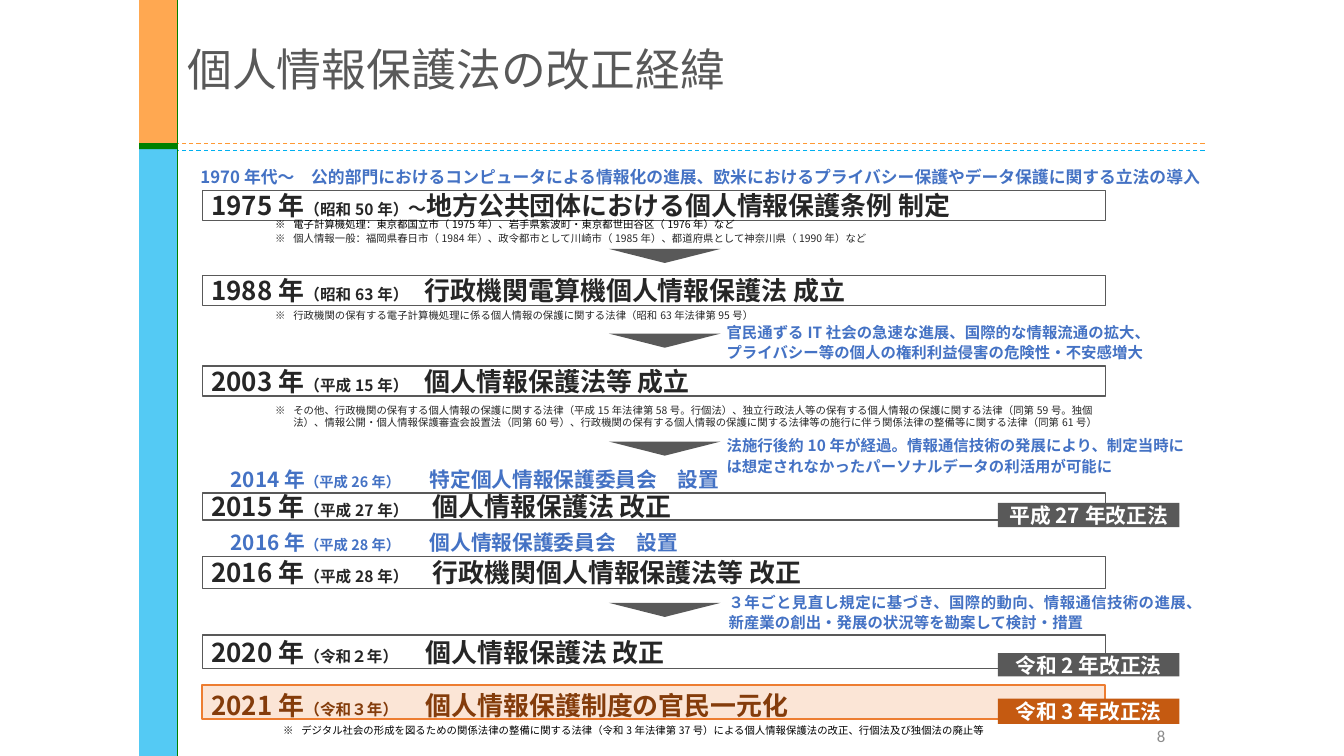
import pptx
import pptx.util
import pptx.dml.color
import pptx.enum.dml
import pptx.enum.shapes
import pptx.enum.text
import pptx.oxml
import pptx.oxml.ns
import lxml.etree

Pt = pptx.util.Pt
Kind = pptx.enum.shapes.MSO_SHAPE
Align = pptx.enum.text.PP_ALIGN
Anchor = pptx.enum.text.MSO_ANCHOR
qn = pptx.oxml.ns.qn

FONT = "Noto Sans CJK JP"
HUE = {
    "white": "FFFFFF", "black": "000000", "ink": "262626", "gray": "595959",
    "pale": "8C8C8C", "blue": "4472C4", "sky": "00B0F0", "orange": "FF9933",
    "green": "008000", "peach": "FBE5D6", "rust": "ED7D31", "brown": "843C0B",
    "burnt": "C55A11",
}

TITLE = "個人情報保護法の改正経緯"
PAGE = "8"
BANDS = [
    (105.8, 434.2, "sky", 67),
    (0, 105.8, "orange", 85),
    (102.2, 4.3, "green", 100),
]
RULES = [
    ((860.4, 102.2), (126.7, 102.2), "orange", 0.75, True),
    ((860.4, 107.3), (126.7, 107.3), "sky", 0.75, True),
    ((126.7, 0), (126.7, 540), "green", 1, False),
]
LAWS = [
    (136.1, 21.6, "1975年", "（昭和50年）", "～", "地方公共団体における個人情報保護条例 制定", 0),
    (196.6, 21.6, "1988年", "（昭和63年）", "\t", "行政機関電算機個人情報保護法 成立", 152.6),
    (261.4, 21.6, "2003年", "（平成15年）", "\t", "個人情報保護法等 成立", 152.6),
    (352.1, 19.4, "2015年", "（平成27年）", "\t", "個人情報保護法 改正", 158.2),
    (397.4, 23, "2016年", "（平成28年）", "\t", "行政機関個人情報保護法等 改正", 158.2),
    (453.6, 23.8, "2020年", "（令和２年）", "\t", "個人情報保護法 改正", 153.2),
    (489.6, 23.8, "2021年", "（令和３年）", "\t", "個人情報保護制度の官民一元化", 153.2),
]
BADGES = [
    (359.3, 17.3, "平成27年改正法", "gray"),
    (466.6, 16.6, "令和2年改正法", "gray"),
    (499, 18, "令和3年改正法", "burnt"),
]
ARROWS = [177.8, 238.3, 315.4, 430.6]
BOARDS = [
    (329.8, "2014年", "（平成26年）", "特定個人情報保護委員会　設置"),
    (375.1, "2016年", "（平成28年）", "個人情報保護委員会　設置"),
]
NOTES = [
    (189.4, 152.6, 416.9, "black", "電子計算機処理：東京都国立市（1975年）、岩手県紫波町・東京都世田谷区（1976年）など"),
    (189.4, 162, 558.7, "ink", "個人情報一般：福岡県春日市（1984年）、政令都市として川崎市（1985年）、都道府県として神奈川県（1990年）など"),
    (189.4, 217.4, 495.4, "ink", "行政機関の保有する電子計算機処理に係る個人情報の保護に関する法律（昭和63年法律第95号）"),
    (189.4, 285.1, 602, "ink", "その他、行政機関の保有する個人情報の保護に関する法律（平成15年法律第58号。行個法）、独立行政法人等の保有する個人情報の保護に関する法律（同第59号。独個法）、情報公開・個人情報保護審査会設置法（同第60号）、行政機関の保有する個人情報の保護に関する法律等の施行に伴う関係法律の整備等に関する法律（同第61号）"),
    (195.1, 513.4, 517, "black", "デジタル社会の形成を図るための関係法律の整備に関する法律（令和3年法律第37号）による個人情報保護法の改正、行個法及び独個法の廃止等"),
]
TRENDS = [
    (136.1, 115.2, 733.7, 20.9, 12, "1970年代～　公的部門におけるコンピュータによる情報化の進展、欧米におけるプライバシー保護やデータ保護に関する立法の導入"),
    (511.9, 225.4, 341.3, 36, 11, "官民通ずるIT社会の急速な進展、国際的な情報流通の拡大、\nプライバシー等の個人の権利利益侵害の危険性・不安感増大"),
    (511.9, 306.7, 341.3, 36, 11, "法施行後約10年が経過。情報通信技術の発展により、制定当時には想定されなかったパーソナルデータの利活用が可能に"),
    (513.4, 418.3, 341.3, 36, 11, "３年ごと見直し規定に基づき、国際的動向、情報通信技術の進展、新産業の創出・発展の状況等を勘案して検討・措置"),
]

deck = pptx.Presentation()
deck.slide_width, deck.slide_height = Pt(960), Pt(540)
slide = deck.slides.add_slide(deck.slide_layouts[6])
shapes = slide.shapes


def tint(hue):
    return pptx.dml.color.RGBColor.from_string(HUE[hue])


def style(run, size, hue, bold=False, font=FONT):
    run.font.size = Pt(size)
    run.font.bold = bold
    run.font.name = font
    run.font.color.rgb = tint(hue)
    props = run.font._element
    lxml.etree.SubElement(props, qn("a:ea")).set("typeface", font)


def block(kind, left, top, wide, high, fill, edge=None, width=1):
    item = shapes.add_shape(kind, Pt(left), Pt(top), Pt(wide), Pt(high))
    item.shadow.inherit = False
    item.fill.solid()
    item.fill.fore_color.rgb = tint(fill)
    if edge:
        item.line.color.rgb = tint(edge)
        item.line.width = Pt(width)
    else:
        item.line.fill.background()
    return item


def label(left, top, wide, high, text, size, hue, bold=False, font=FONT, grow=True):
    frame = shapes.add_textbox(Pt(left), Pt(top), Pt(wide), Pt(high)).text_frame
    frame.word_wrap = True
    if grow:
        frame.auto_size = pptx.enum.text.MSO_AUTO_SIZE.SHAPE_TO_FIT_TEXT
    else:
        frame.vertical_anchor = Anchor.MIDDLE
    frame.text = text
    for para in frame.paragraphs:
        for run in para.runs:
            style(run, size, hue, bold, font)
    return frame


def pieces(para, parts, hue, stop):
    for text, size in parts:
        run = para.add_run()
        run.text = text
        style(run, size, hue, True)
    if stop:
        tabs = lxml.etree.SubElement(para._p.get_or_add_pPr(), qn("a:tabLst"))
        tab = lxml.etree.SubElement(tabs, qn("a:tab"))
        tab.set("pos", str(int(Pt(stop))))
        tab.set("algn", "l")


def main():
    label(126.7, 0, 733.7, 102.2, TITLE, 32, "gray", grow=False).paragraphs[0].line_spacing = 0.9
    for top, high, hue, alpha in BANDS:
        band = block(Kind.RECTANGLE, 99.4, top, 27.3, high, hue)
        if alpha < 100:
            color = band._element.spPr.find(".//" + qn("a:srgbClr"))
            lxml.etree.SubElement(color, qn("a:alpha")).set("val", str(alpha * 1000))
    for start, end, hue, width, dash in RULES:
        rule = shapes.add_connector(
            pptx.enum.shapes.MSO_CONNECTOR.STRAIGHT, *map(Pt, start + end))
        rule.line.color.rgb = tint(hue)
        rule.line.width = Pt(width)
        if dash:
            rule.line.dash_style = pptx.enum.dml.MSO_LINE.DASH
        lxml.etree.SubElement(rule._element.spPr, qn("a:effectLst"))
    page = label(663.8, 511.2, 175.7, 28.8, PAGE, 12, "pale", font="Calibri", grow=False)
    page.paragraphs[0].alignment = Align.RIGHT

    for top, high, year, era, gap, name, stop in LAWS:
        last = year == "2021年"
        look = ("peach", "rust", 1.5) if last else ("white", "gray", 1)
        frame = block(Kind.RECTANGLE, 144.5, top, 645.1, high, *look).text_frame
        frame.margin_left = frame.margin_right = Pt(6.5)
        frame.margin_top = frame.margin_bottom = Pt(2.9)
        frame.word_wrap = True
        frame.vertical_anchor = Anchor.MIDDLE
        para = frame.paragraphs[0]
        para.alignment = Align.LEFT
        if last:
            para.line_spacing = 1.2
        parts = [(year, 18.5), (era, 11.1), (gap, 12.9), (name, 18.5)]
        pieces(para, parts, "brown" if last else "ink", stop)

    for top, high, text, hue in BADGES:
        badge = block(Kind.PENTAGON, 712.8, top, 129.6, high, hue)
        badge.adjustments[0] = 0
        frame = badge.text_frame
        frame.margin_left = frame.margin_right = 0
        frame.margin_top = frame.margin_bottom = 0
        frame.vertical_anchor = Anchor.MIDDLE
        frame.text = text
        frame.paragraphs[0].alignment = Align.CENTER
        style(frame.paragraphs[0].runs[0], 14.8, "white", True)

    for top in ARROWS:
        block(Kind.FLOWCHART_MERGE, 434.9, top, 79.9, 10.1, "gray")

    for top, year, era, name in BOARDS:
        frame = label(157.7, top, 483, 25.2, "", 14.8, "blue")
        pieces(frame.paragraphs[0], [(year, 14.8), (era, 10.2), ("\t" + name, 14.8)], "blue", 142.3)

    for left, top, wide, hue, text in NOTES:
        para = label(left, top, wide, 16.6, "※\t" + text, 7.4, hue).paragraphs[0]
        para.space_after = Pt(5.5)
        props = para._p.get_or_add_pPr()
        props.set("marL", str(int(Pt(13))))
        props.set("indent", str(int(Pt(-13))))

    for left, top, wide, high, size, text in TRENDS:
        for para in label(left, top, wide, high, text, size, "blue", True).paragraphs:
            para.alignment = Align.JUSTIFY
            para.line_spacing = Pt(14.8)
    deck.save("out.pptx")


if __name__ == "__main__":
    main()
